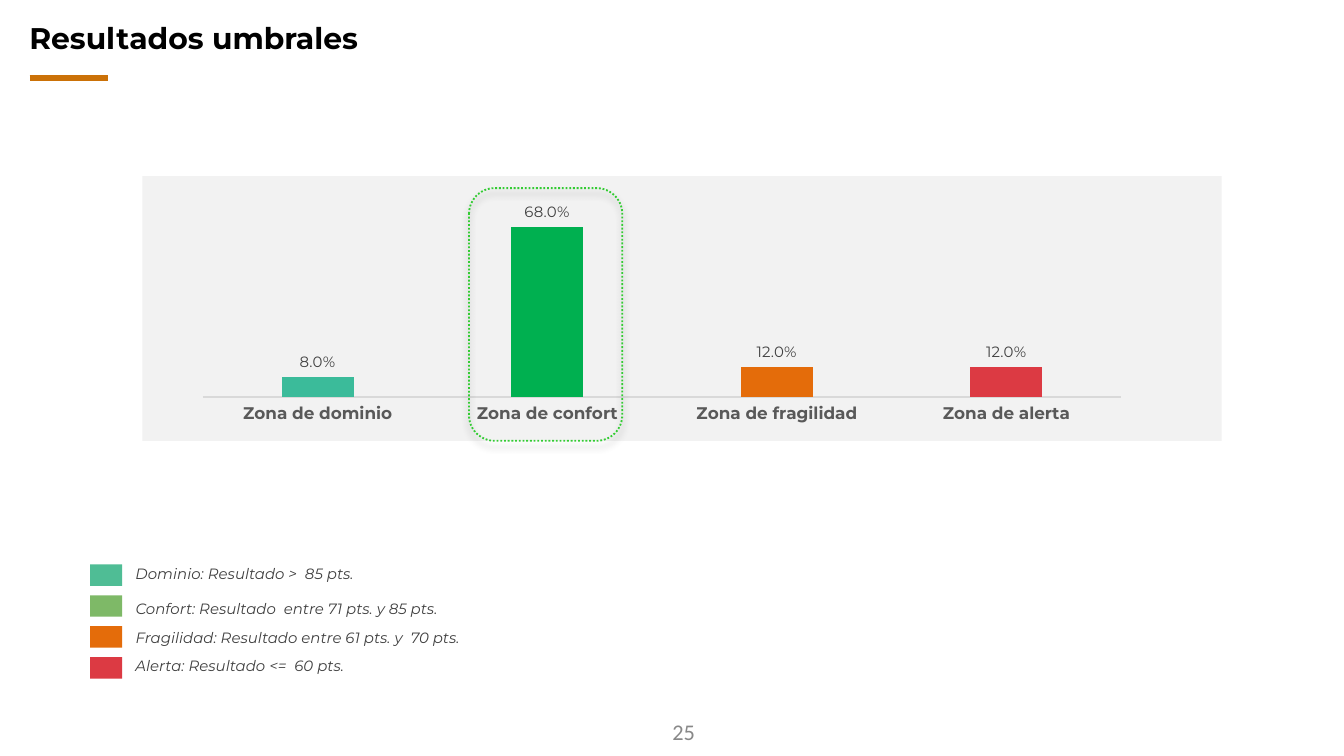
from pptx import Presentation
from pptx.chart.data import CategoryChartData
from pptx.dml.color import RGBColor
from pptx.enum.chart import XL_CHART_TYPE, XL_LABEL_POSITION, XL_TICK_LABEL_POSITION, XL_TICK_MARK
from pptx.enum.dml import MSO_LINE
from pptx.enum.shapes import MSO_CONNECTOR, MSO_SHAPE
from pptx.enum.text import MSO_ANCHOR, PP_ALIGN
from pptx.oxml import parse_xml
from pptx.oxml.ns import nsdecls, qn
from pptx.util import Inches, Pt

COLUMN = XL_CHART_TYPE.COLUMN_CLUSTERED
OUTSIDE = XL_LABEL_POSITION.OUTSIDE_END
NO_TICK = XL_TICK_MARK.NONE
BESIDE = XL_TICK_LABEL_POSITION.NEXT_TO_AXIS
DOTS = MSO_LINE.ROUND_DOT
STRAIGHT = MSO_CONNECTOR.STRAIGHT
RECT, ROUND = MSO_SHAPE.RECTANGLE, MSO_SHAPE.ROUNDED_RECTANGLE
TOP, MIDDLE = MSO_ANCHOR.TOP, MSO_ANCHOR.MIDDLE
LEFT, RIGHT = PP_ALIGN.LEFT, PP_ALIGN.RIGHT

ZONES = [
    ("Zona de dominio", 0.08, "3BBB9A"),
    ("Zona de confort", 0.68, "00B050"),
    ("Zona de fragilidad", 0.12, "E46C0A"),
    ("Zona de alerta", 0.12, "DC3A43"),
]
LEGEND = [
    ("Dominio: Resultado >  85 pts.", "4FBD95", 4.15, 1.93),
    ("Confort: Resultado  entre 71 pts. y 85 pts.", "7EB967", 4.41, 2.59),
    ("Fragilidad: Resultado entre 61 pts. y  70 pts.", "E46C0A", 4.63, 2.72),
    ("Alerta: Resultado <=  60 pts.", "DC3A43", 4.84, 1.86),
]


def color(code):
    return RGBColor.from_string(code)


def paint(fill, code):
    fill.solid()
    fill.fore_color.rgb = color(code)


def inches(*sizes):
    return [Inches(size) for size in sizes]


class Board:
    face = "Montserrat"
    dark = "404040"

    def __init__(self, slide):
        self.slide = slide
        self.shapes = slide.shapes

    def style(self, font, size, code, face=None, bold=False, italic=False):
        font.name = face or self.face
        font.size = Pt(size)
        font.bold = bold
        font.italic = italic
        font.color.rgb = color(code)

    def rule(self, start, end, code, width):
        line = self.shapes.add_connector(STRAIGHT, *inches(*start, *end))
        line.line.color.rgb = color(code)
        line.line.width = Pt(width)
        props = line._element.spPr
        props.append(parse_xml(f"<a:effectLst {nsdecls('a')}/>"))

    def text(self, place, words, size, code, align=LEFT, anchor=TOP, space=None, **look):
        frame = self.shapes.add_textbox(*inches(*place)).text_frame
        frame.word_wrap = True
        frame.vertical_anchor = anchor
        para = frame.paragraphs[0]
        para.text = words
        para.alignment = align
        para.line_spacing = space
        self.style(para.font, size, code, **look)

    def swatch(self, place, code):
        box = self.shapes.add_shape(RECT, *inches(*place))
        box.shadow.inherit = False
        paint(box.fill, code)
        box.line.fill.background()

    def frame(self, place, code):
        box = self.shapes.add_shape(ROUND, *inches(*place))
        box.shadow.inherit = False
        box.fill.background()
        box.line.color.rgb = color(code)
        box.line.width = Pt(1)
        box.line.dash_style = DOTS
        effects = box._element.spPr.find(qn("a:effectLst"))
        effects.append(parse_xml(
            f'<a:outerShdw {nsdecls("a")} blurRad="{Pt(4)}" dist="{Pt(3)}" dir="5400000" rotWithShape="0">'
            '<a:srgbClr val="000000"><a:alpha val="40000"/></a:srgbClr></a:outerShdw>'))

    def chart(self, place, zones, back, area):
        data = CategoryChartData(number_format="0.0%")
        data.categories = [name for name, _, _ in zones]
        data.add_series("Series 1", [value for _, value, _ in zones])
        chart = self.shapes.add_chart(COLUMN, *inches(*place), data).chart
        chart.has_legend = False
        chart.has_title = False
        self.style(chart.font, 10, "000000", face="Calibri")

        axis = chart.category_axis
        axis.major_tick_mark = NO_TICK
        axis.minor_tick_mark = NO_TICK
        axis.tick_label_position = BESIDE
        axis.format.line.color.rgb = color("D9D9D9")
        axis.format.line.width = Pt(0.75)
        self.style(axis.tick_labels.font, 9, "595959", bold=True)

        scale = chart.value_axis
        scale.visible = False
        scale.has_major_gridlines = False
        scale.major_tick_mark = NO_TICK
        scale.tick_labels.number_format = "0.0%"
        scale.tick_labels.number_format_is_linked = False
        scale.minimum_scale = 0
        scale.maximum_scale = 0.8

        plot = chart.plots[0]
        plot.vary_by_categories = False
        plot.gap_width = 219
        plot.overlap = -27
        series = plot.series[0]
        paint(series.format.fill, "808080")
        for spot, (_, _, code) in enumerate(zones):
            paint(series.points[spot].format.fill, code)
        labels = series.data_labels
        labels.show_value = True
        labels.position = OUTSIDE
        labels.number_format = "0.0%"
        labels.number_format_is_linked = False
        self.style(labels.font, 8, self.dark)
        self.layout(chart, back, area)

    def layout(self, chart, back, area):
        body = chart._chartSpace.find(qn("c:chart"))
        body.addnext(parse_xml(
            f'<c:spPr {nsdecls("c", "a")}><a:solidFill><a:srgbClr val="{back}"/></a:solidFill>'
            '<a:ln><a:noFill/></a:ln></c:spPr>'))
        field = body.find(qn("c:plotArea"))
        for old in field.findall(qn("c:layout")):
            field.remove(old)
        sides = "".join(f'<c:{key} val="{size}"/>' for key, size in zip("xywh", area))
        field.insert(0, parse_xml(
            f'<c:layout {nsdecls("c")}><c:manualLayout><c:layoutTarget val="inner"/>'
            f'<c:xMode val="edge"/><c:yMode val="edge"/>{sides}</c:manualLayout></c:layout>'))


def main():
    deck = Presentation()
    deck.slide_width = Inches(10)
    deck.slide_height = deck.slide_width * 9 // 16
    board = Board(deck.slides.add_slide(deck.slide_layouts[6]))

    board.rule((0.22, 0.58), (0.8, 0.58), "CB7107", 3)
    board.text((0.12, 0.13, 9.76, 0.47), "Resultados umbrales", 16, "000000", space=0.9, bold=True)
    board.text((4.37, 5.29, 0.9, 0.3), "25", 12, "888888", RIGHT, MIDDLE, face="Calibri")
    for row, (words, code, top, width) in enumerate(LEGEND):
        board.swatch((0.67, 4.2 + 0.23 * row, 0.24, 0.16), code)
        board.text((0.91, top, width, 0.24), words, 8, board.dark, italic=True)
    board.chart((1.06, 1.31, 8.03, 1.97), ZONES, "F2F2F2", (0.056, 0.078, 0.851, 0.758))
    board.frame((3.49, 1.4, 1.14, 1.88), "33CC33")

    deck.save("out.pptx")


if __name__ == "__main__":
    main()
